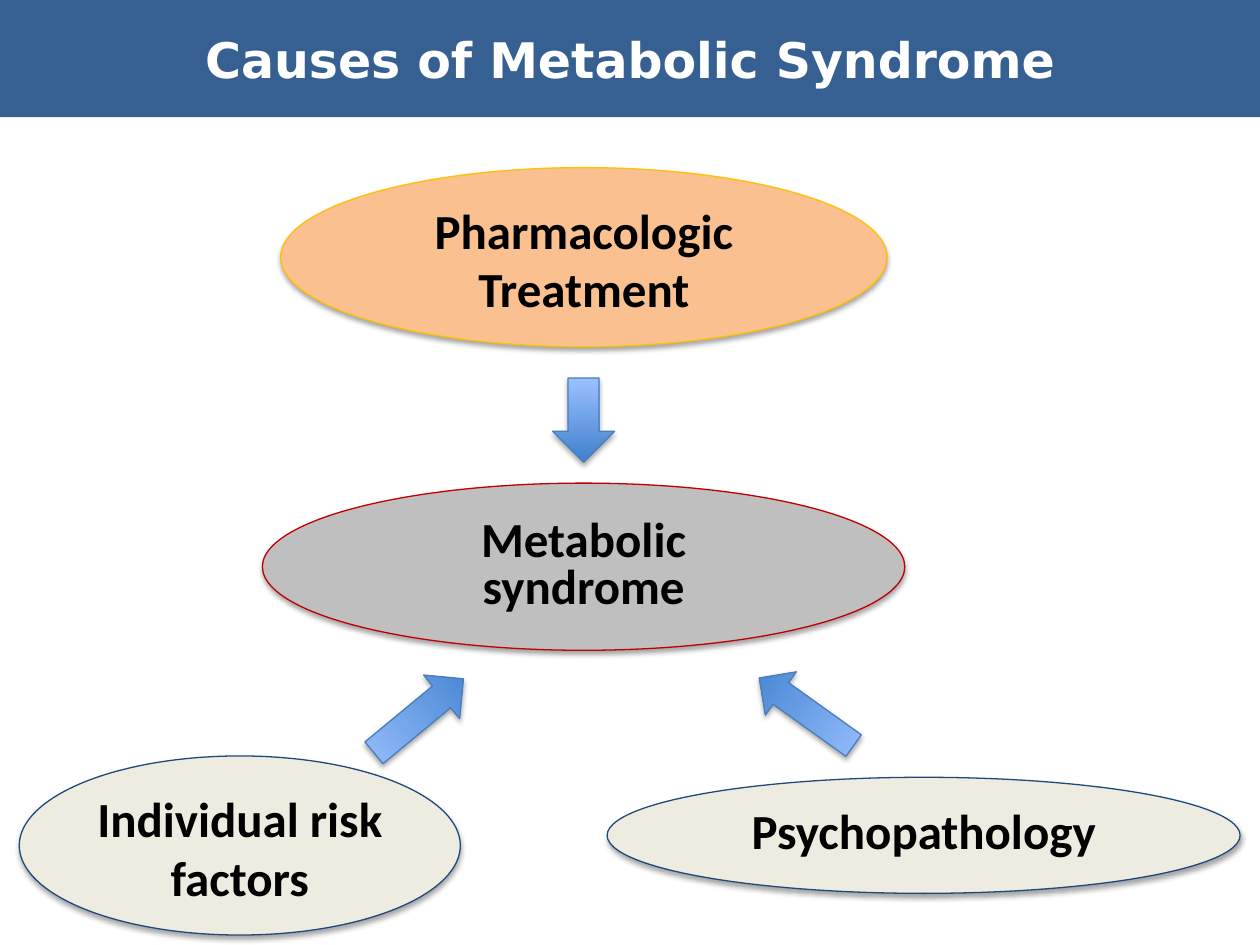
from lxml import etree
from pptx import Presentation
from pptx.dml.color import RGBColor
from pptx.enum.shapes import MSO_SHAPE
from pptx.enum.text import MSO_ANCHOR, PP_ALIGN
from pptx.oxml.ns import qn
from pptx.util import Cm, Pt

OVAL, ARROW = MSO_SHAPE.OVAL, MSO_SHAPE.DOWN_ARROW
TOP, MIDDLE = MSO_ANCHOR.TOP, MSO_ANCHOR.MIDDLE
CENTER = PP_ALIGN.CENTER

# Content: places are left, top, width, height in centimetres
TITLE = "Causes of Metabolic Syndrome"
OVALS = [
    # lines, place, fill, outline, anchor, line spacing
    (["Metabolic", "syndrome"], (5.29, 9.74, 12.95, 3.37), "BFBFBF", "C00000", MIDDLE, 0.8),
    (["Pharmacologic Treatment"], (5.66, 3.38, 12.22, 3.61), "FAC090", "FFC000", TOP, 1.0),
    (["Individual risk factors"], (0.39, 15.24, 8.89, 3.61), "EEECE1", "1F497D", TOP, 1.0),
    (["Psychopathology"], (12.24, 15.67, 12.76, 2.34), "EEECE1", "1F497D", TOP, 1.0),
]
ARROWS = [
    # place before turning, degrees clockwise
    ((11.14, 7.62, 1.25, 1.7), 0),
    ((7.87, 13.26, 1.14, 2.34), 230.4),
    ((15.72, 13.18, 1.07, 2.34), 125.6),
]
ARROW_COLOURS = ("9BC1FF", "3F80CD")


def colour(code):
    return RGBColor.from_string(code)


def write(shape, lines, font, text_colour, anchor, spacing=1.0):
    frame = shape.text_frame
    frame.word_wrap = True
    frame.vertical_anchor = anchor
    frame.margin_left = frame.margin_right = Cm(0.22)
    frame.text = "\n".join(lines)
    for para in frame.paragraphs:
        para.alignment = CENTER
        para.line_spacing = spacing
        para.font.name = font
        para.font.size = Pt(28)
        para.font.bold = True
        para.font.color.rgb = colour(text_colour)


def add_outlined(page, kind, place, outline):
    """Add a shape with a thin outline and a soft shadow below it."""
    shape = page.shapes.add_shape(kind, *map(Cm, place))
    shape.line.color.rgb = colour(outline)
    shape.line.width = Pt(0.75)
    shape.shadow.inherit = False
    effects = shape._element.spPr.find(qn("a:effectLst"))
    shadow = etree.SubElement(effects, qn("a:outerShdw"), blurRad=str(Pt(3.1)),
                              dist=str(Pt(1.8)), dir="5400000", rotWithShape="0")
    black = etree.SubElement(shadow, qn("a:srgbClr"), val="000000")
    etree.SubElement(black, qn("a:alpha"), val="35000")
    return shape


deck = Presentation()
deck.slide_width, deck.slide_height = Cm(25.4), Cm(19.05)
page = deck.slides.add_slide(deck.slide_layouts[5])

# Title band
title = page.shapes.title
title.left, title.top, title.width, title.height = Cm(0), Cm(0), deck.slide_width, Cm(2.36)
title.fill.solid()
title.fill.fore_color.rgb = colour("376092")
write(title, [TITLE], "DejaVu Sans", "FFFFFF", MIDDLE)

# Syndrome and its causes
for lines, place, fill, outline, anchor, spacing in OVALS:
    oval = add_outlined(page, OVAL, place, outline)
    oval.fill.solid()
    oval.fill.fore_color.rgb = colour(fill)
    write(oval, lines, "Calibri", "000000", anchor, spacing)

# Arrows from the causes to the syndrome
for place, turn in ARROWS:
    arrow = add_outlined(page, ARROW, place, "4A7EBB")
    arrow.rotation = turn
    arrow.fill.gradient()
    arrow.fill.gradient_angle = 270
    for stop, code in zip(arrow.fill.gradient_stops, ARROW_COLOURS):
        stop.color.rgb = colour(code)

deck.save("out.pptx")
